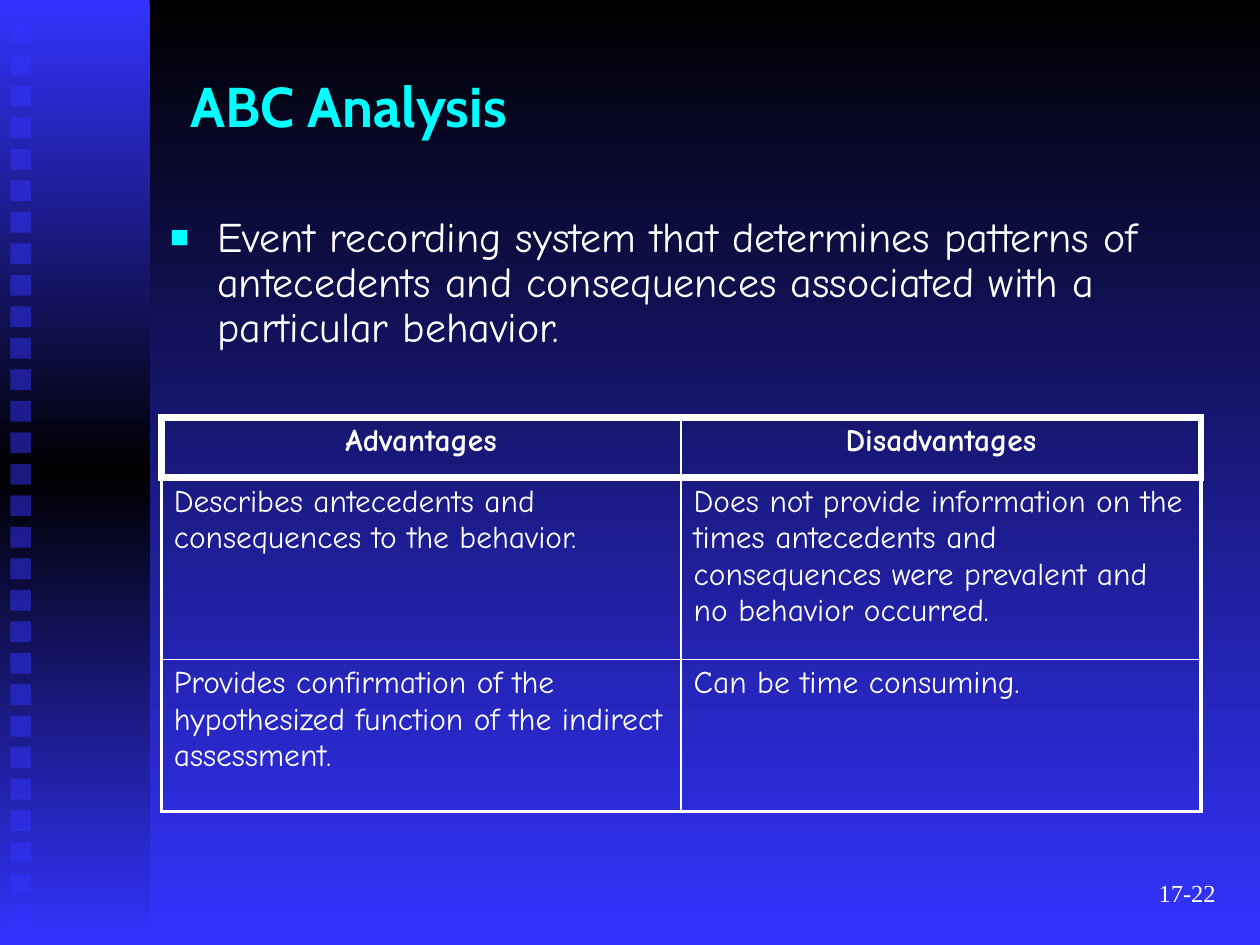
from dataclasses import dataclass

from lxml.etree import SubElement
from pptx import Presentation
from pptx.dml.color import RGBColor
from pptx.enum.shapes import MSO_SHAPE as Shape
from pptx.enum.text import MSO_ANCHOR as Anchor, PP_ALIGN as Align
from pptx.oxml.ns import qn
from pptx.util import Cm, Pt

# Content
TITLE = "ABC Analysis"
BODY = ("Event recording system that determines patterns of antecedents "
        "and consequences associated with a particular behavior.")
TABLE_ROWS = [
    ("Advantages", "Disadvantages"),
    ("Describes antecedents and consequences to the behavior.",
     "Does not provide information on the times antecedents and "
     "consequences were prevalent and no behavior occurred."),
    ("Provides confirmation of the hypothesized function of the indirect assessment.",
     "Can be time consuming."),
]
PAGE_NUMBER = "17-22"


@dataclass(frozen=True)
class Theme:
    black: str = "000000"
    blue: str = "3333FF"
    accent: str = "00FFFF"
    white: str = "FFFFFF"
    title_font: str = "Cabin"
    body_font: str = "Comic Neue"
    number_font: str = "Times New Roman"
    title_size: int = 32
    body_size: int = 24
    table_size: int = 18
    number_size: int = 14


theme = Theme()

# Table geometry in cm, rule widths in points
COLUMN_WIDTH = 10.48
ROW_HEIGHTS = [1.22, 3.66, 3.07]
ROW_RULES = [4.5, 4.5, 1, 2.25]
SIDE_RULES = [4.5, 2.25, 2.25]
INNER_RULE = 1

# Strip of squares in cm
SQUARE_COUNT, SQUARE_SIZE, SQUARE_STEP = 29, 0.42, 0.635


def add_xml(parent, tag, **attributes):
    return SubElement(parent, qn(tag), attributes)


def add_color(parent, color):
    return add_xml(add_xml(parent, "a:solidFill"), "a:srgbClr", val=color)


def paint_gradient(fill, element, colors):
    """Spread the colours evenly from top to bottom."""
    fill.gradient()
    fill.gradient_angle = 270
    stops = element.xpath(".//a:gsLst")[0]
    for stop in list(stops):
        stops.remove(stop)
    for index, color in enumerate(colors):
        position = 100000 * index // (len(colors) - 1)
        stop = add_xml(stops, "a:gs", pos=str(position))
        add_xml(stop, "a:srgbClr", val=color)


def add_rectangle(page, left, top, width, height):
    box = page.shapes.add_shape(Shape.RECTANGLE, Cm(left), Cm(top), Cm(width), Cm(height))
    box.shadow.inherit = False
    box.line.fill.background()
    return box


def write(frame, text, font, size, color, bold=False, align=Align.LEFT):
    frame.word_wrap = True
    para = frame.paragraphs[0]
    para.text = text
    para.alignment = align
    para.font.name, para.font.size, para.font.bold = font, Pt(size), bold
    para.font.color.rgb = RGBColor.from_string(color)
    return para


def add_text(page, left, top, width, height, anchor, *style, **options):
    box = page.shapes.add_textbox(Cm(left), Cm(top), Cm(width), Cm(height))
    box.text_frame.vertical_anchor = anchor
    return write(box.text_frame, *style, **options)


def space_before(para, percent):
    properties = para._p.get_or_add_pPr()
    spacing = add_xml(properties, "a:spcBef")
    add_xml(spacing, "a:spcPct", val=str(percent * 1000))
    # Paragraph spacing must come ahead of the default run style
    for run_style in properties.findall(qn("a:defRPr")):
        properties.append(run_style)
    return properties


def add_bullet(para):
    para.line_spacing = 0.9
    properties = space_before(para, 20)
    properties.set("marL", str(Cm(0.95)))
    properties.set("indent", str(-Cm(0.95)))
    add_xml(add_xml(properties, "a:buClr"), "a:srgbClr", val=theme.accent)
    add_xml(properties, "a:buSzPct", val="75000")
    add_xml(properties, "a:buFont", typeface="Arial")
    add_xml(properties, "a:buChar", char="■")
    for run_style in properties.findall(qn("a:defRPr")):
        properties.append(run_style)


def draw_borders(cell, row, column):
    sides = [SIDE_RULES[row], INNER_RULE, SIDE_RULES[row]]
    widths = {"a:lnL": sides[column], "a:lnR": sides[column + 1],
              "a:lnT": ROW_RULES[row], "a:lnB": ROW_RULES[row + 1]}
    properties = cell._tc.get_or_add_tcPr()
    for tag, width in widths.items():
        add_color(add_xml(properties, tag, w=str(Pt(width))), theme.white)
    cell.fill.background()


def add_comparison(page):
    columns = len(TABLE_ROWS[0])
    table = page.shapes.add_table(
        len(TABLE_ROWS), columns, Cm(3.25), Cm(8.41),
        Cm(COLUMN_WIDTH * columns), Cm(sum(ROW_HEIGHTS))).table
    table.first_row = table.horz_banding = False
    for column in table.columns:
        column.width = Cm(COLUMN_WIDTH)
    for row, texts in enumerate(TABLE_ROWS):
        table.rows[row].height = Cm(ROW_HEIGHTS[row])
        header = row == 0
        for column, text in enumerate(texts):
            cell = table.cell(row, column)
            para = write(cell.text_frame, text, theme.body_font, theme.table_size,
                         theme.white, bold=header,
                         align=Align.CENTER if header else Align.LEFT)
            space_before(para, 20)
            draw_borders(cell, row, column)


def main():
    deck = Presentation()
    deck.slide_width, deck.slide_height = Cm(25.4), Cm(19.05)
    page = deck.slides.add_slide(deck.slide_layouts[6])
    paint_gradient(page.background.fill, page.element, [theme.black, theme.blue])

    # Side band with its strip of translucent squares
    band = add_rectangle(page, 0, 0, 3.02, 19.05)
    paint_gradient(band.fill, band.element, [theme.blue, theme.black, theme.blue])
    for index in range(SQUARE_COUNT):
        square = add_rectangle(page, 0.21, 0.46 + index * SQUARE_STEP,
                               SQUARE_SIZE, SQUARE_SIZE)
        square.fill.solid()
        square.fill.fore_color.rgb = RGBColor.from_string(theme.blue)
        add_xml(square.element.xpath("./p:spPr/a:solidFill/a:srgbClr")[0],
                "a:alpha", val="50000")

    # Title, definition, table and page number
    add_text(page, 3.6, 1.06, 16.08, 2.12, Anchor.MIDDLE, TITLE,
             theme.title_font, theme.title_size, theme.accent, bold=True)
    add_bullet(add_text(page, 3.18, 4.23, 20.75, 3.18, Anchor.TOP, BODY,
                        theme.body_font, theme.body_size, theme.white))
    add_comparison(page)
    add_text(page, 19.47, 17.36, 5.29, 1.27, Anchor.MIDDLE, PAGE_NUMBER,
             theme.number_font, theme.number_size, theme.white, align=Align.RIGHT)

    deck.save("out.pptx")


if __name__ == "__main__":
    main()
